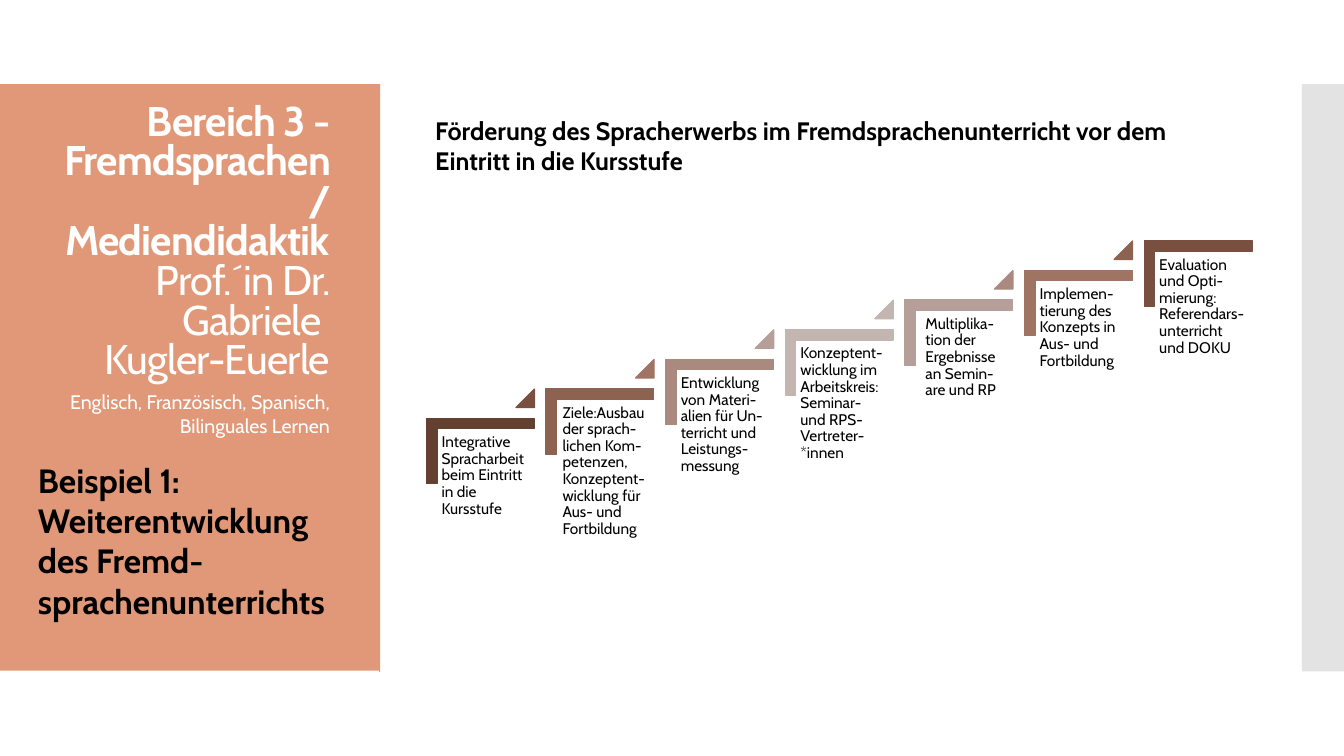
import copy

import pptx
import pptx.dml.color
import pptx.enum.shapes
import pptx.enum.text
import pptx.oxml
import pptx.oxml.ns
import pptx.util

Pt = pptx.util.Pt
RGBColor = pptx.dml.color.RGBColor
SHAPES = pptx.enum.shapes.MSO_SHAPE
ALIGN = pptx.enum.text.PP_ALIGN
ANCHOR = pptx.enum.text.MSO_ANCHOR

FONT = "Cabin"
WHITE = RGBColor(0xFF, 0xFF, 0xFF)
BLACK = RGBColor(0x00, 0x00, 0x00)
SALMON = RGBColor(0xE0, 0x98, 0x78)
GREY = RGBColor(0xE3, 0xE3, 0xE3)
BROWN_1 = RGBColor(0x63, 0x40, 0x2F)
BROWN_2 = RGBColor(0x79, 0x50, 0x3F)
BROWN_3 = RGBColor(0x8E, 0x62, 0x50)
BROWN_4 = RGBColor(0xA0, 0x74, 0x63)
BROWN_5 = RGBColor(0xAA, 0x8A, 0x7E)
BROWN_6 = RGBColor(0xB6, 0x9F, 0x98)
BROWN_7 = RGBColor(0xC3, 0xB5, 0xB0)

presentation = pptx.Presentation()
presentation.slide_width = Pt(960)
presentation.slide_height = Pt(540)
slide = presentation.slides.add_slide(presentation.slide_layouts[1])


def add_filled(kind, left, top, width, height, color, line_width=0):
    shape = slide.shapes.add_shape(kind, Pt(left), Pt(top), Pt(width), Pt(height))
    shape.shadow.inherit = False
    shape.fill.solid()
    shape.fill.fore_color.rgb = color
    if line_width:
        shape.line.color.rgb = color
        shape.line.width = Pt(line_width)
    else:
        shape.line.fill.background()
    return shape


def write(shape, text, size, color, bold=False, align=ALIGN.LEFT, spacing=1.0, inset=(7.2, 3.6)):
    frame = shape.text_frame
    frame.word_wrap = True
    frame.auto_size = pptx.enum.text.MSO_AUTO_SIZE.NONE
    frame.margin_left = frame.margin_right = Pt(inset[0])
    frame.margin_top = frame.margin_bottom = Pt(inset[1])
    frame.text = text
    for paragraph in frame.paragraphs:
        paragraph.alignment = align
        paragraph.line_spacing = spacing
        paragraph.space_before = Pt(0)
        for run in paragraph.runs:
            run.font.name = FONT
            run.font.size = Pt(size)
            run.font.bold = bold
            run.font.color.rgb = color
        for line_break in paragraph._p.findall(pptx.oxml.ns.qn("a:br")):
            line_break.append(copy.deepcopy(paragraph.runs[0]._r.get_or_add_rPr()))


panel = add_filled(SHAPES.RECTANGLE, 0, 60, 271.5, 420, SALMON)
slide.shapes._spTree.insert(2, panel._element)
add_filled(SHAPES.RECTANGLE, 930, 60, 30, 419.5, GREY)

title = slide.shapes.title
title.left, title.top, title.width, title.height = Pt(20), Pt(90), Pt(223), Pt(187)
write(title, "Bereich 3 - Fremdsprachen / Mediendidaktik\vProf.´in Dr. Gabriele \nKugler-Euerle",
      29.6, WHITE, align=ALIGN.RIGHT, spacing=0.8)
title.text_frame.vertical_anchor = ANCHOR.BOTTOM
title.text_frame.paragraphs[0].runs[0].font.bold = True
for paragraph in title.text_frame.paragraphs:
    for run in paragraph.runs:
        run._r.get_or_add_rPr().set("spc", "-60")

languages = slide.placeholders[1]
languages.left, languages.top, languages.width, languages.height = Pt(20), Pt(275), Pt(223), Pt(183)
write(languages, "Englisch, Französisch, Spanisch,\vBilinguales Lernen", 14, WHITE, align=ALIGN.RIGHT)
properties = languages.text_frame.paragraphs[0]._p.get_or_add_pPr()
properties.set("marL", "0")
properties.set("indent", "0")
properties.append(pptx.oxml.parse_xml("<a:buNone %s/>" % pptx.oxml.ns.nsdecls("a")))

STEPS = [
    ("Integrative Spracharbeit beim Eintritt in die Kursstufe", BROWN_1, BROWN_2, 0, 70),
    ("Ziele:Ausbau der sprach-lichen Kom-petenzen, Konzeptent-wicklung für Aus- und Fortbildung",
     BROWN_3, BROWN_4, 1, 76.3),
    ("Entwicklung von Materi-alien für Un-terricht und Leistungs-messung", BROWN_5, BROWN_6, 0, 70),
    ("Konzeptent-wicklung im Arbeitskreis: Seminar- und RPS-Vertreter-*innen", BROWN_7, BROWN_7, 0, 70),
    ("Multiplika-tion der Ergebnisse an Semin-are und RP", BROWN_6, BROWN_5, 3.9, 62.6),
    ("Implemen-tierung des Konzepts in Aus- und Fortbildung", BROWN_4, BROWN_3, 0, 70),
    ("Evaluation und Opti-mierung: Referendars-unterricht und DOKU", BROWN_2, None, 0, 70),
]
STEP_RIGHT, STEP_UP = 85.44, 21.15

for index, (text, corner_color, triangle_color, shift, width) in enumerate(STEPS):
    right, up = index * STEP_RIGHT, index * STEP_UP
    corner = add_filled(SHAPES.CORNER, 319.7 + right, 283.7 - up, 46.8, 77, corner_color, 0.85)
    corner.rotation = 90
    corner.adjustments[0] = corner.adjustments[1] = 0.161
    label = slide.shapes.add_textbox(Pt(311.8 + right + shift), Pt(306.7 - up), Pt(width), Pt(61.2))
    write(label, text, 11, BLACK, spacing=0.9, inset=(3.6, 3.6))
    if triangle_color:
        triangle = add_filled(SHAPES.ISOSCELES_TRIANGLE, 368.6 + right, 277.9 - up, 13.2, 13.2,
                              triangle_color, 0.85)
        triangle.adjustments[0] = 1

example = slide.shapes.add_textbox(Pt(20), Pt(324.7), Pt(223), Pt(152.6))
write(example, "Beispiel 1: Weiterentwicklung des Fremd-sprachenunterrichts", 24, BLACK, bold=True)
heading = slide.shapes.add_textbox(Pt(303.8), Pt(78.5), Pt(569), Pt(51))
write(heading, "Förderung des Spracherwerbs im Fremdsprachenunterricht vor dem Eintritt in die Kursstufe",
      18, BLACK, bold=True)

add_filled(SHAPES.RECTANGLE, 0, 479, 270.7, 60.5, WHITE)

presentation.save("out.pptx")
